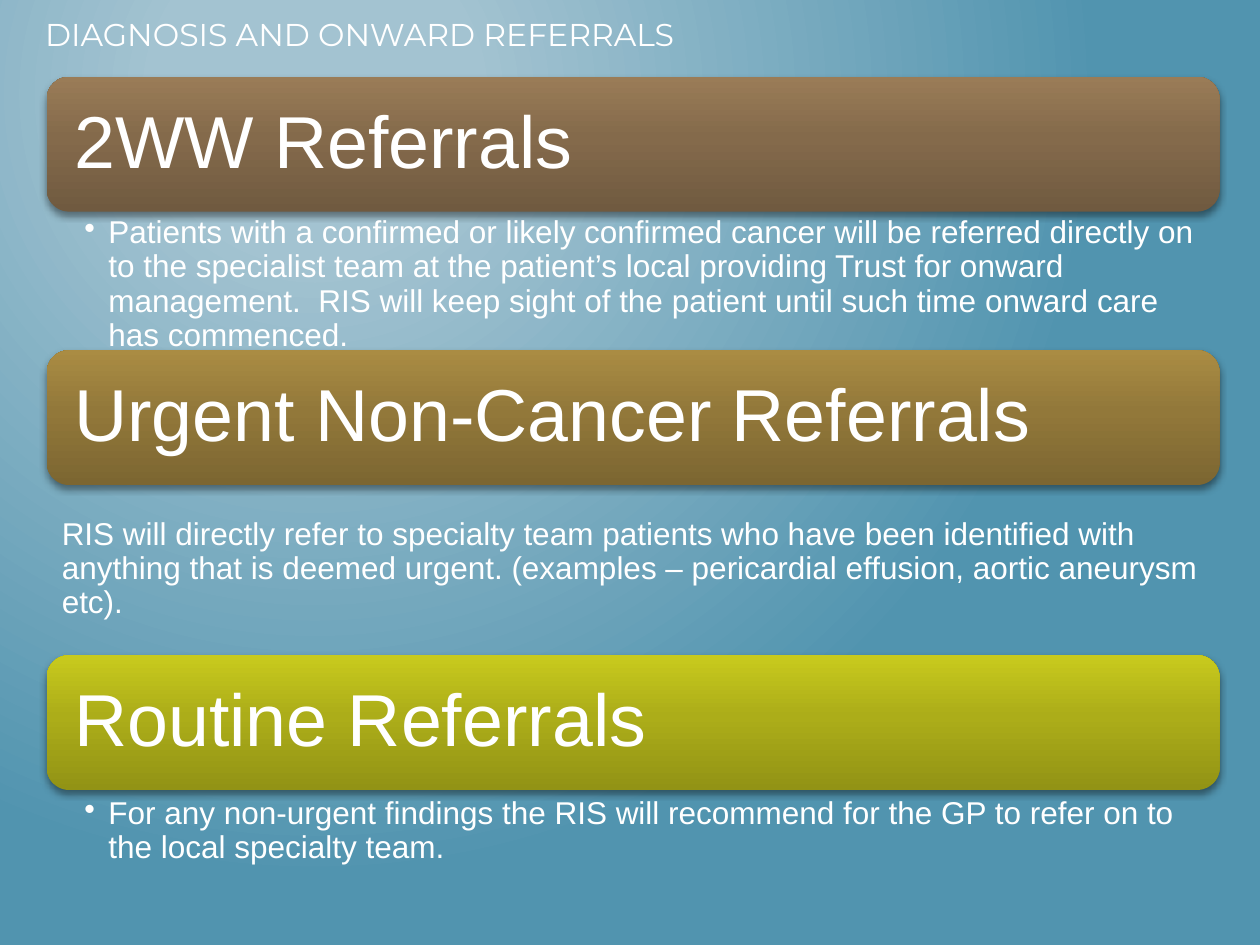
import pptx
import pptx.dml.color
import pptx.enum.shapes
import pptx.enum.text
import pptx.oxml
import pptx.oxml.ns
import pptx.util
from lxml import etree
from pptx.dml.color import RGBColor
from pptx.oxml.ns import qn
from pptx.util import Inches

WHITE = RGBColor(0xFF, 0xFF, 0xFF)
BLACK = RGBColor(0x00, 0x00, 0x00)
SKY = RGBColor(0xA3, 0xC3, 0xD1)
TEAL = RGBColor(0x51, 0x94, 0xAF)
BROWN = [RGBColor(0x70, 0x5A, 0x40), RGBColor(0x84, 0x6A, 0x4B), RGBColor(0x9A, 0x7C, 0x57)]
OCHRE = [RGBColor(0x7C, 0x66, 0x31), RGBColor(0x92, 0x78, 0x3A), RGBColor(0xAA, 0x8C, 0x43)]
LIME = [RGBColor(0x92, 0x93, 0x15), RGBColor(0xAC, 0xAD, 0x19), RGBColor(0xC8, 0xCA, 0x1D)]

BANNER_LEFT, BANNER_WIDTH, BANNER_HEIGHT = 0.37, 9.31, 1.07
LABEL_INSET = 0.05
LABEL_LEFT = BANNER_LEFT + LABEL_INSET
LABEL_WIDTH = BANNER_WIDTH - 2 * LABEL_INSET

# banner top, gradient colours, heading
BANNERS = [
    (0.61, BROWN, "2WW Referrals"),
    (2.78, OCHRE, "Urgent Non-Cancer Referrals"),
    (5.20, LIME, "Routine Referrals"),
]
# top, height, text
BULLETS = [
    (1.69, 1.09, "Patients with a confirmed or likely confirmed cancer will be referred "
                 "directly on to the specialist team at the patient’s local providing Trust "
                 "for onward management.  RIS will keep sight of the patient until such time "
                 "onward care has commenced."),
    (6.30, 0.76, "For any non-urgent findings the RIS will recommend for the GP to refer on "
                 "to the local specialty team."),
]
URGENT_TEXT = ("RIS will directly refer to specialty team patients who have been identified with "
               "anything that is deemed urgent. (examples – pericardial effusion, aortic "
               "aneurysm etc).")


def add_node(parent, tag, **attributes):
    node = etree.SubElement(parent, qn(tag))
    for name, value in attributes.items():
        node.set(name, str(value))
    return node


def set_gradient(fill, owner, stops):
    """Give the fill these (percent, colour) stops; return its emptied XML node."""
    fill.gradient()
    node = owner.find(".//" + qn("a:gradFill"))
    for child in list(node):
        node.remove(child)
    stop_list = add_node(node, "a:gsLst")
    for percent, colour in stops:
        stop = add_node(stop_list, "a:gs", pos=percent * 1000)
        add_node(stop, "a:srgbClr", val=colour)
    return node


def paint_background(page):
    node = set_gradient(page.background.fill, page.element, [(20, SKY), (100, TEAL)])
    circle = add_node(node, "a:path", path="circle")
    add_node(circle, "a:fillToRect", l=50000, t=20000, r=100000, b=100000)


def add_text(page, left, top, width, height, text, size, insets, font="Arial", spacing=0.9):
    """Add a white one-paragraph box; insets are left, top, right, bottom."""
    box = page.shapes.add_textbox(Inches(left), Inches(top), Inches(width), Inches(height))
    frame = box.text_frame
    frame.word_wrap = True
    frame.margin_left, frame.margin_top, frame.margin_right, frame.margin_bottom = map(Inches, insets)
    para = frame.paragraphs[0]
    para.text = text
    para.line_spacing = spacing
    para.font.size = pptx.util.Pt(size)
    para.font.name = font
    para.font.color.rgb = WHITE
    return frame


def add_shadow(shape):
    shape.shadow.inherit = False
    effects = shape.element.spPr.find(qn("a:effectLst"))
    shadow = add_node(effects, "a:outerShdw", blurRad=pptx.util.Pt(4), dist=pptx.util.Pt(2),
                      dir=90 * 60000, rotWithShape=0)
    colour = add_node(shadow, "a:srgbClr", val=BLACK)
    add_node(colour, "a:alpha", val=44000)


def add_banner(page, top, colours, heading):
    banner = page.shapes.add_shape(
        pptx.enum.shapes.MSO_SHAPE.ROUNDED_RECTANGLE,
        Inches(BANNER_LEFT), Inches(top), Inches(BANNER_WIDTH), Inches(BANNER_HEIGHT))
    node = set_gradient(banner.fill, banner.element.spPr, zip((0, 55, 100), colours))
    add_node(node, "a:lin", ang=270 * 60000, scaled=0)
    banner.line.fill.background()
    add_shadow(banner)
    frame = add_text(page, LABEL_LEFT, top + LABEL_INSET, LABEL_WIDTH,
                     BANNER_HEIGHT - 2 * LABEL_INSET, heading, 42, [0.17] * 4)
    frame.vertical_anchor = pptx.enum.text.MSO_ANCHOR.MIDDLE


def add_bullet(page, top, height, text):
    frame = add_text(page, BANNER_LEFT, top, BANNER_WIDTH, height, text, 18,
                     [0.3, 0.03, 0.14, 0.03])
    properties = frame.paragraphs[0]._p.get_or_add_pPr()
    properties.set("marL", str(Inches(0.19)))
    properties.set("indent", str(-Inches(0.19)))
    bullet = pptx.oxml.parse_xml(
        '<a:buChar %s char="•"/>' % pptx.oxml.ns.nsdecls("a"))
    properties.find(qn("a:lnSpc")).addnext(bullet)


def main():
    deck = pptx.Presentation()
    deck.slide_width, deck.slide_height = Inches(10), Inches(7.5)
    page = deck.slides.add_slide(deck.slide_layouts[6])
    paint_background(page)
    add_text(page, 0.26, 0.07, 9.74, 0.67, "DIAGNOSIS AND ONWARD REFERRALS", 18,
             [0.1, 0.05, 0.1, 0.05], font="Montserrat", spacing=1.0)
    for top, colours, heading in BANNERS:
        add_banner(page, top, colours, heading)
    for top, height, text in BULLETS:
        add_bullet(page, top, height, text)
    add_text(page, LABEL_LEFT, 4.04, LABEL_WIDTH, 0.97, URGENT_TEXT, 18, [0.07] * 4)
    deck.save("out.pptx")


if __name__ == "__main__":
    main()
